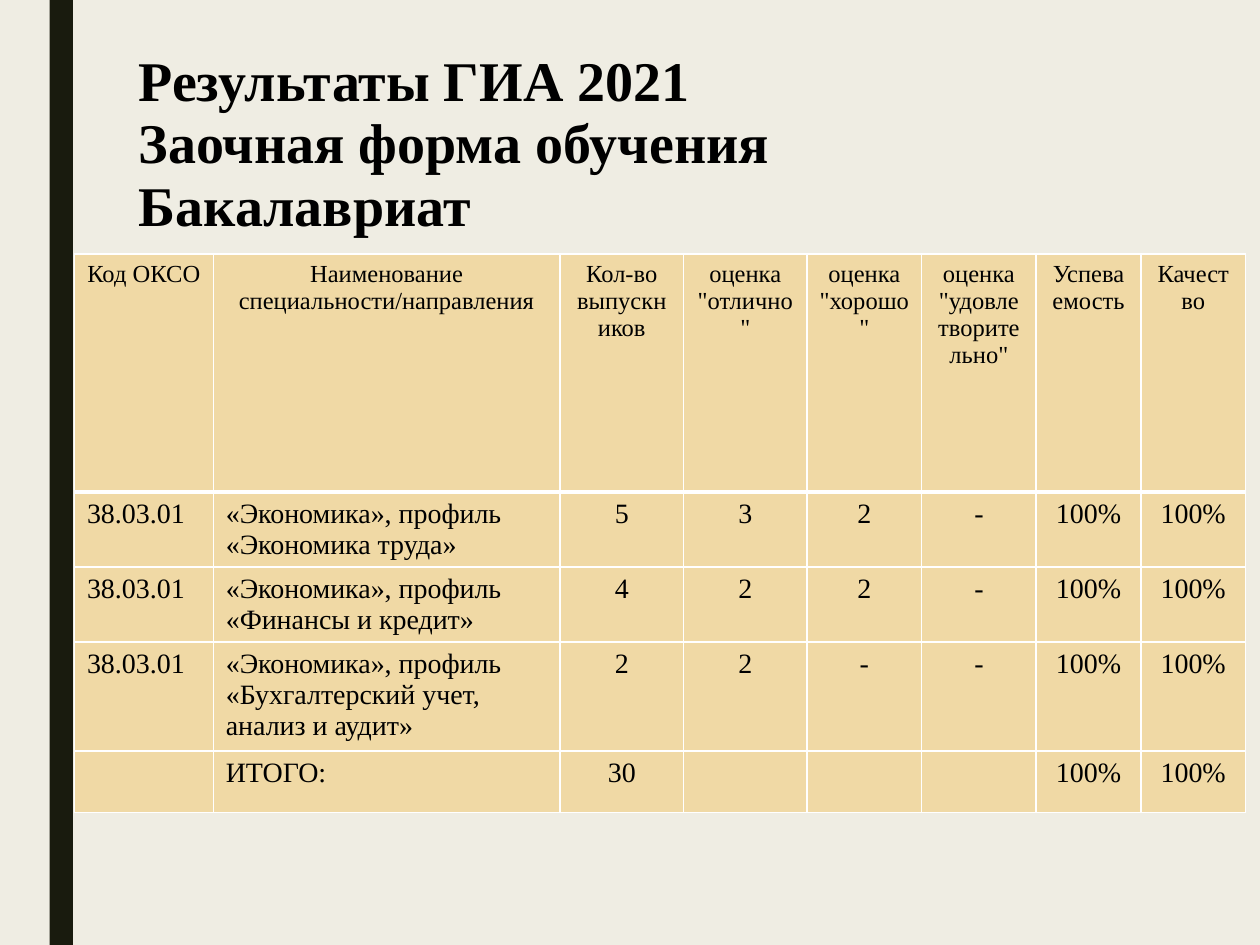
from lxml.etree import SubElement
from pptx import Presentation
from pptx.dml.color import RGBColor
from pptx.enum.shapes import MSO_SHAPE
from pptx.enum.text import MSO_ANCHOR, MSO_AUTO_SIZE, PP_ALIGN
from pptx.oxml.ns import qn
from pptx.util import Cm, Pt

PAPER = RGBColor(0xEF, 0xED, 0xE3)
DARK = RGBColor(0x19, 0x1B, 0x0E)
SAND = RGBColor(0xF0, 0xD9, 0xA5)
WHITE = RGBColor(0xFF, 0xFF, 0xFF)
BLACK = RGBColor(0, 0, 0)
FONT = "Times New Roman"

TITLE = "Результаты ГИА 2021\vЗаочная форма обучения\vБакалавриат"
COLUMN_WIDTHS = [2.8, 6.99, 2.49, 2.49, 2.31, 2.31, 2.11, 2.11]
ROW_HEIGHTS = [4.8, 1.51, 1.51, 2.2, 1.24]
RESULTS = [
    ["Код ОКСО", "Наименование специальности/направления", "Кол-во выпускников",
     'оценка "отлично"', 'оценка "хорошо"', 'оценка "удовлетворительно"',
     "Успеваемость", "Качество"],
    ["38.03.01", "«Экономика», профиль «Экономика труда»",
     "5", "3", "2", "-", "100%", "100%"],
    ["38.03.01", "«Экономика», профиль «Финансы и кредит»",
     "4", "2", "2", "-", "100%", "100%"],
    ["38.03.01", "«Экономика», профиль «Бухгалтерский учет, анализ и аудит»",
     "2", "2", "-", "-", "100%", "100%"],
    ["", "ИТОГО:", "30", "", "", "", "100%", "100%"],
]


def format_text(paragraph, size, bold=False):
    """Apply the slide's font to every run of a paragraph."""
    for run in paragraph.runs:
        run.font.name = FONT
        run.font.size = Pt(size)
        run.font.bold = bold
        run.font.color.rgb = BLACK


def add_side_bar(slide):
    """Draw the dark vertical bar at the left."""
    bar = slide.shapes.add_shape(MSO_SHAPE.RECTANGLE, Cm(1), 0, Cm(0.47), Cm(19.05))
    bar.shadow.inherit = False
    bar.fill.solid()
    bar.fill.fore_color.rgb = DARK
    bar.line.fill.background()


def set_title(slide):
    """Place and format the title placeholder."""
    title = slide.shapes.title
    title.left, title.top, title.width, title.height = Cm(2.54), Cm(0.91), Cm(22.86), Cm(3.18)
    frame = title.text_frame
    frame.text = TITLE
    frame.word_wrap = True
    frame.auto_size = MSO_AUTO_SIZE.NONE
    frame.vertical_anchor = MSO_ANCHOR.TOP
    heading = frame.paragraphs[0]
    heading.alignment = PP_ALIGN.LEFT
    heading.line_spacing = 0.93
    format_text(heading, 32, bold=True)


def set_borders(cell, top, bottom):
    """Give a cell white borders with the given top and bottom widths."""
    properties = cell._tc.get_or_add_tcPr()
    widths = {"a:lnL": 1, "a:lnR": 1, "a:lnT": top, "a:lnB": bottom}
    for position, (side, width) in enumerate(widths.items()):
        border = SubElement(properties, qn(side), w=str(Pt(width)))
        fill = SubElement(border, qn("a:solidFill"))
        SubElement(fill, qn("a:srgbClr"), val=str(WHITE))
        properties.insert(position, border)


def fill_cell(cell, text, row, column):
    """Write and format one table cell."""
    cell.fill.solid()
    cell.fill.fore_color.rgb = SAND
    set_borders(cell, top=3 if row == 1 else 1, bottom=3 if row == 0 else 1)
    cell.text = text
    paragraph = cell.text_frame.paragraphs[0]
    centred = row == 0 or column > 1
    paragraph.alignment = PP_ALIGN.CENTER if centred else PP_ALIGN.LEFT
    format_text(paragraph, 14 if row == 0 else 16)


def add_results_table(slide):
    """Build the table of examination results."""
    table = slide.shapes.add_table(
        len(ROW_HEIGHTS), len(COLUMN_WIDTHS), Cm(1.5), Cm(5.12),
        Cm(sum(COLUMN_WIDTHS)), Cm(sum(ROW_HEIGHTS))).table
    for column, width in zip(table.columns, COLUMN_WIDTHS):
        column.width = Cm(width)
    for row, height in zip(table.rows, ROW_HEIGHTS):
        row.height = Cm(height)
    for row, texts in enumerate(RESULTS):
        for column, text in enumerate(texts):
            fill_cell(table.cell(row, column), text, row, column)


def main():
    """Build and save the slide."""
    presentation = Presentation()
    presentation.slide_width, presentation.slide_height = Cm(25.4), Cm(19.05)
    slide = presentation.slides.add_slide(presentation.slide_layouts[5])
    slide.background.fill.solid()
    slide.background.fill.fore_color.rgb = PAPER
    add_side_bar(slide)
    set_title(slide)
    add_results_table(slide)
    presentation.save("out.pptx")


if __name__ == "__main__":
    main()
